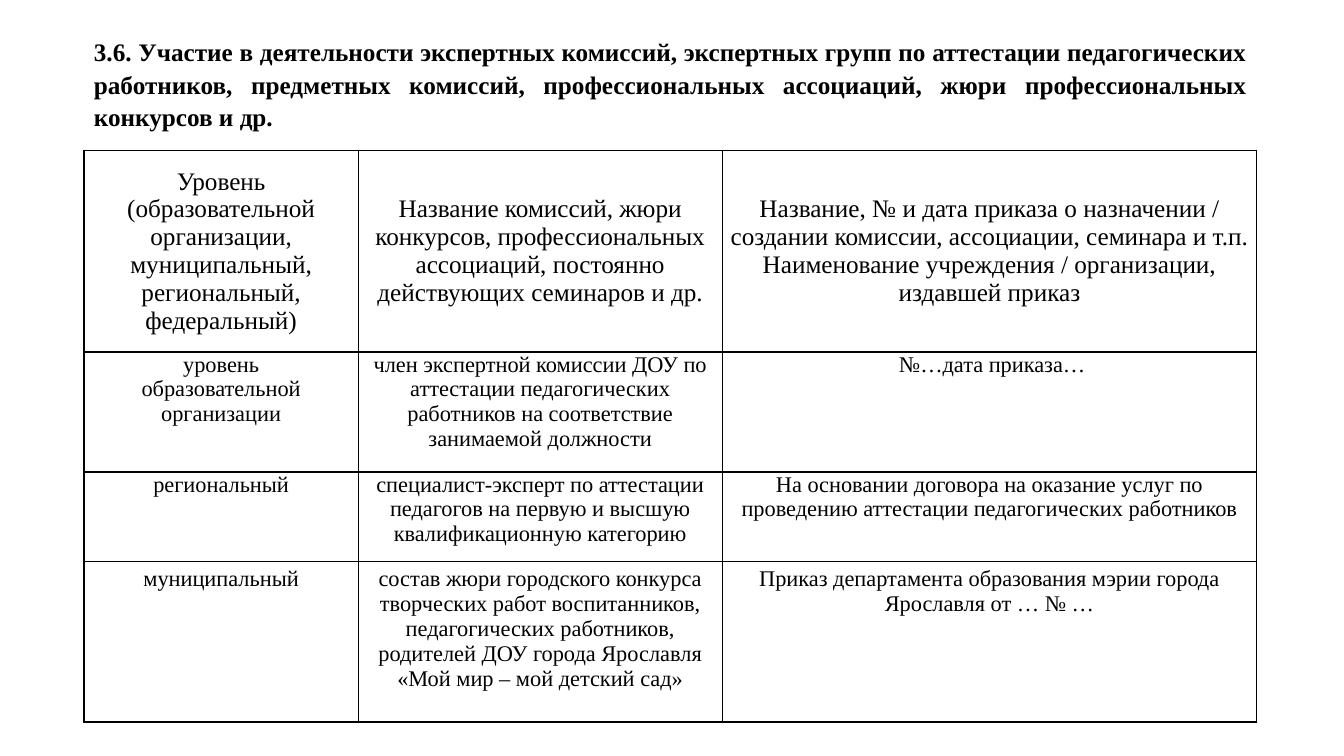
"""Build the slide on taking part in expert commissions as a bordered table."""
from dataclasses import dataclass

from lxml.etree import SubElement
from pptx import Presentation
from pptx.dml.color import RGBColor
from pptx.enum.text import MSO_ANCHOR, MSO_AUTO_SIZE, PP_ALIGN
from pptx.oxml.ns import qn
from pptx.util import Pt


@dataclass(frozen=True)
class Theme:
    font: str = "Times New Roman"
    ink: RGBColor = RGBColor(0, 0, 0)
    paper: RGBColor = RGBColor(255, 255, 255)
    heading_size: int = 18
    body_size: int = 16
    border: int = 1


HEADING = (
    "3.6. Участие в деятельности экспертных комиссий, экспертных групп по аттестации "
    "педагогических работников, предметных комиссий, профессиональных ассоциаций, "
    "жюри профессиональных конкурсов и др."
)
COLUMN_WIDTHS = (195.9, 260, 381.8)
ROW_HEIGHTS = (144, 85.7, 64, 114.5)
PARTICIPATION = (
    (
        "Уровень\n(образовательной организации, муниципальный, региональный, федеральный)",
        "Название комиссий, жюри конкурсов, профессиональных ассоциаций, "
        "постоянно действующих семинаров и др.",
        "Название, № и дата приказа о назначении / создании комиссии, ассоциации, семинара и т.п.\n"
        "Наименование учреждения / организации, издавшей приказ",
    ),
    (
        "уровень\nобразовательной организации",
        "член экспертной комиссии ДОУ по аттестации педагогических работников "
        "на соответствие занимаемой должности",
        " №…дата приказа…",
    ),
    (
        "региональный",
        "специалист-эксперт по аттестации педагогов на первую и высшую квалификационную категорию",
        "На основании договора на оказание услуг по проведению аттестации педагогических работников",
    ),
    (
        "муниципальный",
        "состав жюри городского конкурса творческих работ воспитанников, педагогических "
        "работников, родителей ДОУ города Ярославля «Мой мир – мой детский сад»",
        "Приказ департамента образования мэрии города Ярославля от … № …",
    ),
)


def assign(target, values):
    for name, value in values.items():
        setattr(target, name, value)


class SlideBuilder:
    def __init__(self, slide, theme):
        self.slide = slide
        self.theme = theme

    def wording(self, frame, content, size, bold=False, **paragraph_format):
        frame.text = content
        for paragraph in frame.paragraphs:
            assign(paragraph, paragraph_format)
            for run in paragraph.runs:
                assign(run.font, {"name": self.theme.font, "size": Pt(size), "bold": bold})
                run.font.color.rgb = self.theme.ink

    def heading(self, content, left, top, width, height):
        frame = self.slide.shapes.add_textbox(Pt(left), Pt(top), Pt(width), Pt(height)).text_frame
        assign(frame, {"word_wrap": True, "auto_size": MSO_AUTO_SIZE.SHAPE_TO_FIT_TEXT})
        self.wording(frame, content, self.theme.heading_size, bold=True,
                     alignment=PP_ALIGN.JUSTIFY, line_spacing=1.07)

    def outline(self, cell):
        properties = cell._tc.get_or_add_tcPr()
        for side in ("lnL", "lnR", "lnT", "lnB"):
            edge = SubElement(properties, qn(f"a:{side}"), w=str(Pt(self.theme.border)))
            fill = SubElement(edge, qn("a:solidFill"))
            SubElement(fill, qn("a:srgbClr"), val=str(self.theme.ink))

    def cell(self, cell, content, size, **cell_format):
        assign(cell, cell_format)
        self.outline(cell)
        cell.fill.solid()
        cell.fill.fore_color.rgb = self.theme.paper
        self.wording(cell.text_frame, content, size, alignment=PP_ALIGN.CENTER)

    def table(self, rows, left, top, widths, heights):
        table = self.slide.shapes.add_table(
            len(rows), len(widths), Pt(left), Pt(top), Pt(sum(widths)), Pt(sum(heights))
        ).table
        assign(table, {"first_row": False, "horz_banding": False})
        for column, width in zip(table.columns, widths):
            column.width = Pt(width)
        for row, height in zip(table.rows, heights):
            row.height = Pt(height)
        tight = {"margin_left": Pt(5), "margin_right": Pt(5), "margin_top": 0, "margin_bottom": 0}
        for number, contents in enumerate(rows):
            is_header = number == 0
            size = self.theme.heading_size if is_header else self.theme.body_size
            cell_format = {} if number == len(rows) - 1 else dict(tight)
            cell_format["vertical_anchor"] = MSO_ANCHOR.MIDDLE if is_header else MSO_ANCHOR.TOP
            for position, content in enumerate(contents):
                self.cell(table.cell(number, position), content, size, **cell_format)


def main():
    presentation = Presentation()
    assign(presentation, {"slide_width": Pt(960), "slide_height": Pt(540)})
    slide = presentation.slides.add_slide(presentation.slide_layouts[6])
    builder = SlideBuilder(slide, Theme())
    builder.heading(HEADING, 60, 21, sum(COLUMN_WIDTHS), 73.4)
    builder.table(PARTICIPATION, 60, 107.5, COLUMN_WIDTHS, ROW_HEIGHTS)
    presentation.save("out.pptx")


if __name__ == "__main__":
    main()
